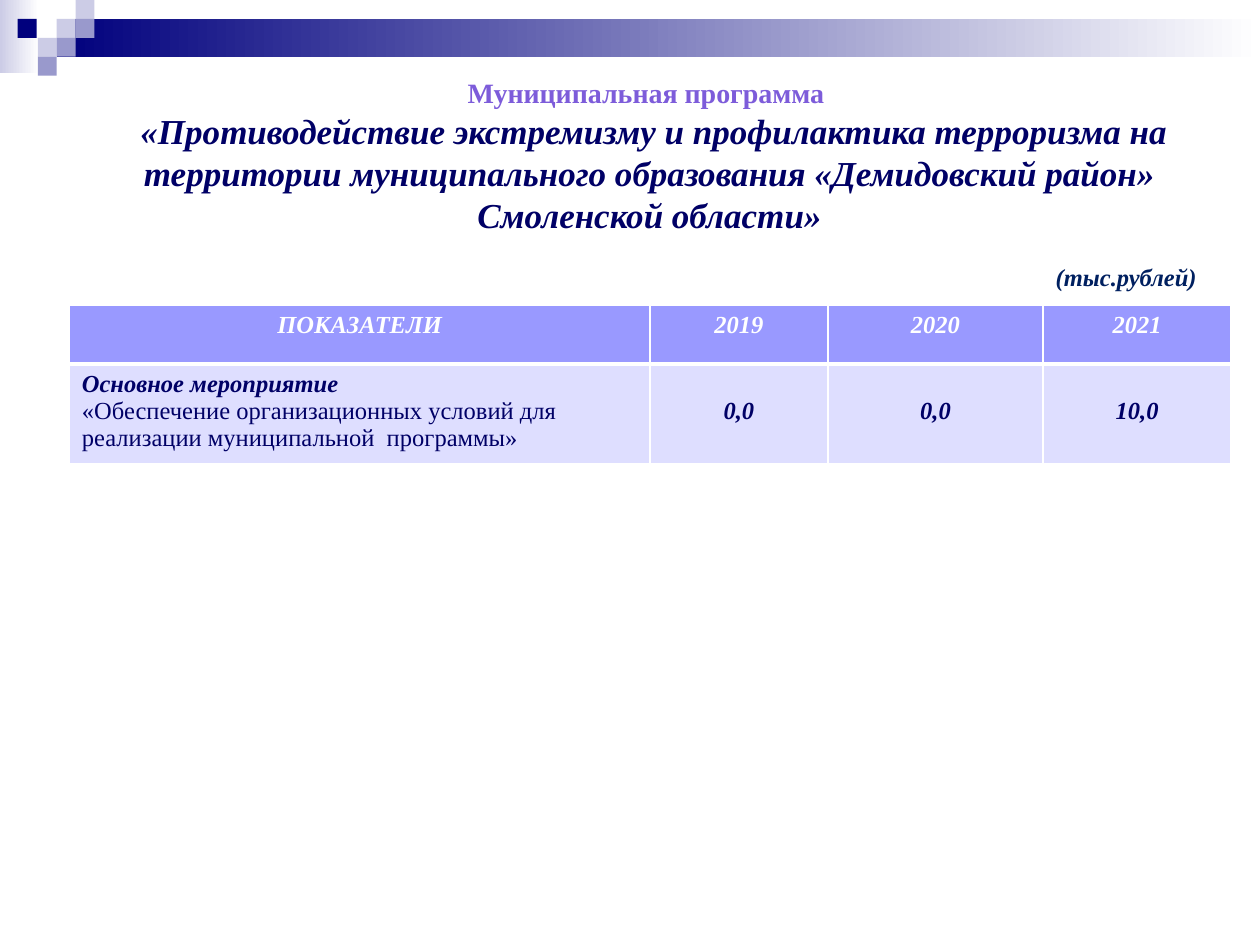
from dataclasses import dataclass

from lxml import etree
from pptx import Presentation
from pptx.dml.color import RGBColor
from pptx.enum import shapes, text
from pptx.oxml.ns import qn
from pptx.util import Inches, Pt


@dataclass(frozen=True)
class Theme:
    font: str = "Times New Roman"
    navy: str = "00007D"
    violet: str = "9999CC"
    pale: str = "CCCCE6"
    white: str = "FFFFFF"
    ink: str = "000066"
    heading: str = "7D5CDA"
    unit: str = "002060"
    header_fill: str = "9999FF"
    body_fill: str = "DEDEFF"
    kicker_size: int = 16
    title_size: int = 20
    body_size: int = 14


CENTER = text.PP_ALIGN.CENTER


def write(p, content, font, size, color, bold=True, italic=True, align=None):
    r = p.add_run()
    r.text = content
    f = r.font
    f.name, f.size, f.bold, f.italic = font, Pt(size), bold, italic
    f.color.rgb = RGBColor.from_string(color)
    p.alignment = align


def set_borders(cell, color, **widths):
    """Draw cell edges; widths maps an edge letter (L, R, T, B) to points."""
    tcPr = cell._tc.get_or_add_tcPr()
    for i, (edge, width) in enumerate(widths.items()):
        ln = etree.Element(qn(f"a:ln{edge}"), w=str(Pt(width)))
        fill = etree.SubElement(ln, qn("a:solidFill"))
        etree.SubElement(fill, qn("a:srgbClr"), val=color)
        tcPr.insert(i, ln)


class SlideBuilder:
    def __init__(self, slide, theme):
        self.s, self.t = slide, theme

    def block(self, left, top, width, height, *colors):
        """Add a rectangle; two colours make a left-to-right gradient."""
        sp = self.s.shapes.add_shape(
            shapes.MSO_SHAPE.RECTANGLE, *map(Inches, (left, top, width, height)))
        sp.shadow.inherit = False
        sp.line.fill.background()
        if len(colors) == 1:
            sp.fill.solid()
            sp.fill.fore_color.rgb = RGBColor.from_string(colors[0])
            return
        sp.fill.gradient()
        sp.fill.gradient_angle = 0
        for stop, color in zip(sp.fill.gradient_stops, colors):
            stop.color.rgb = RGBColor.from_string(color)

    def title(self, kicker, name):
        t, sp = self.t, self.s.shapes.title
        sp.left, sp.top, sp.width, sp.height = map(Inches, (0.31, 0.55, 9.69, 1.72))
        tf = sp.text_frame
        tf.word_wrap = True
        tf.auto_size = text.MSO_AUTO_SIZE.NONE
        tf.vertical_anchor = text.MSO_ANCHOR.TOP
        write(tf.paragraphs[0], kicker, t.font, t.kicker_size, t.heading,
              italic=False, align=CENTER)
        write(tf.add_paragraph(), name, t.font, t.title_size, t.ink, align=CENTER)

    def label(self, content, left, top, width, height):
        t = self.t
        sp = self.s.shapes.add_textbox(*map(Inches, (left, top, width, height)))
        tf = sp.text_frame
        tf.word_wrap = False
        write(tf.paragraphs[0], content, t.font, t.body_size, t.unit)

    def cell(self, cell, lines, fill, color, align, bottom):
        """Fill a cell; lines holds (text, emphasised) pairs."""
        t = self.t
        cell.fill.solid()
        cell.fill.fore_color.rgb = RGBColor.from_string(fill)
        set_borders(cell, t.white, L=1, R=1, T=1, B=bottom)
        tf = cell.text_frame
        for i, (content, strong) in enumerate(lines):
            p = tf.add_paragraph() if i else tf.paragraphs[0]
            write(p, content, t.font, t.body_size, color, strong, strong, align)

    def table(self, header, label, values, left, top, widths, heights):
        t = self.t
        frame = self.s.shapes.add_table(
            len(heights), len(widths), Inches(left), Inches(top),
            Inches(sum(widths)), Inches(sum(heights)))
        tbl = frame.table
        for column, width in zip(tbl.columns, widths):
            column.width = Inches(width)
        for row, height in zip(tbl.rows, heights):
            row.height = Inches(height)
        for i, content in enumerate(header):
            self.cell(tbl.cell(0, i), [(content, True)], t.header_fill, t.white, CENTER, 3)
        self.cell(tbl.cell(1, 0), label, t.body_fill, t.ink, None, 1)
        for i, value in enumerate(values, 1):
            c = tbl.cell(1, i)
            self.cell(c, [(value, True)], t.body_fill, t.ink, CENTER, 1)
            c.vertical_anchor = text.MSO_ANCHOR.MIDDLE
            c.margin_bottom = Inches(0.1)


def main():
    prs = Presentation()
    prs.slide_width, prs.slide_height = Inches(10), Inches(7.5)
    t = Theme()
    b = SlideBuilder(prs.slides.add_slide(prs.slide_layouts[5]), t)

    b.block(0, 0, 0.31, 0.58, t.pale, t.white)
    b.block(0.45, 0.15, 9.55, 0.3, t.navy, t.white)
    side = 0.15
    mosaic = [(0.45, 0.15, t.pale), (0.6, 0, t.pale), (0.6, 0.15, t.violet),
              (0.3, 0.3, t.pale), (0.14, 0.15, t.navy), (0.45, 0.3, t.violet),
              (0.3, 0.45, t.violet)]
    for left, top, color in mosaic:
        b.block(left, top, side, side, color)

    b.title("Муниципальная программа ",
            " «Противодействие экстремизму и профилактика терроризма на территории "
            "муниципального образования «Демидовский район» Смоленской области»")
    b.table(
        header=["ПОКАЗАТЕЛИ", "2019", "2020", "2021"],
        label=[("Основное мероприятие", True),
               ("«Обеспечение организационных условий для реализации "
                "муниципальной  программы»", False)],
        values=["0,0", "0,0", "10,0"],
        left=0.55, top=2.42, widths=[4.61, 1.41, 1.71, 1.49], heights=[0.47, 0.79])
    b.label("(тыс.рублей)", 8.28, 2.03, 1.33, 0.34)
    prs.save("out.pptx")


if __name__ == "__main__":
    main()
